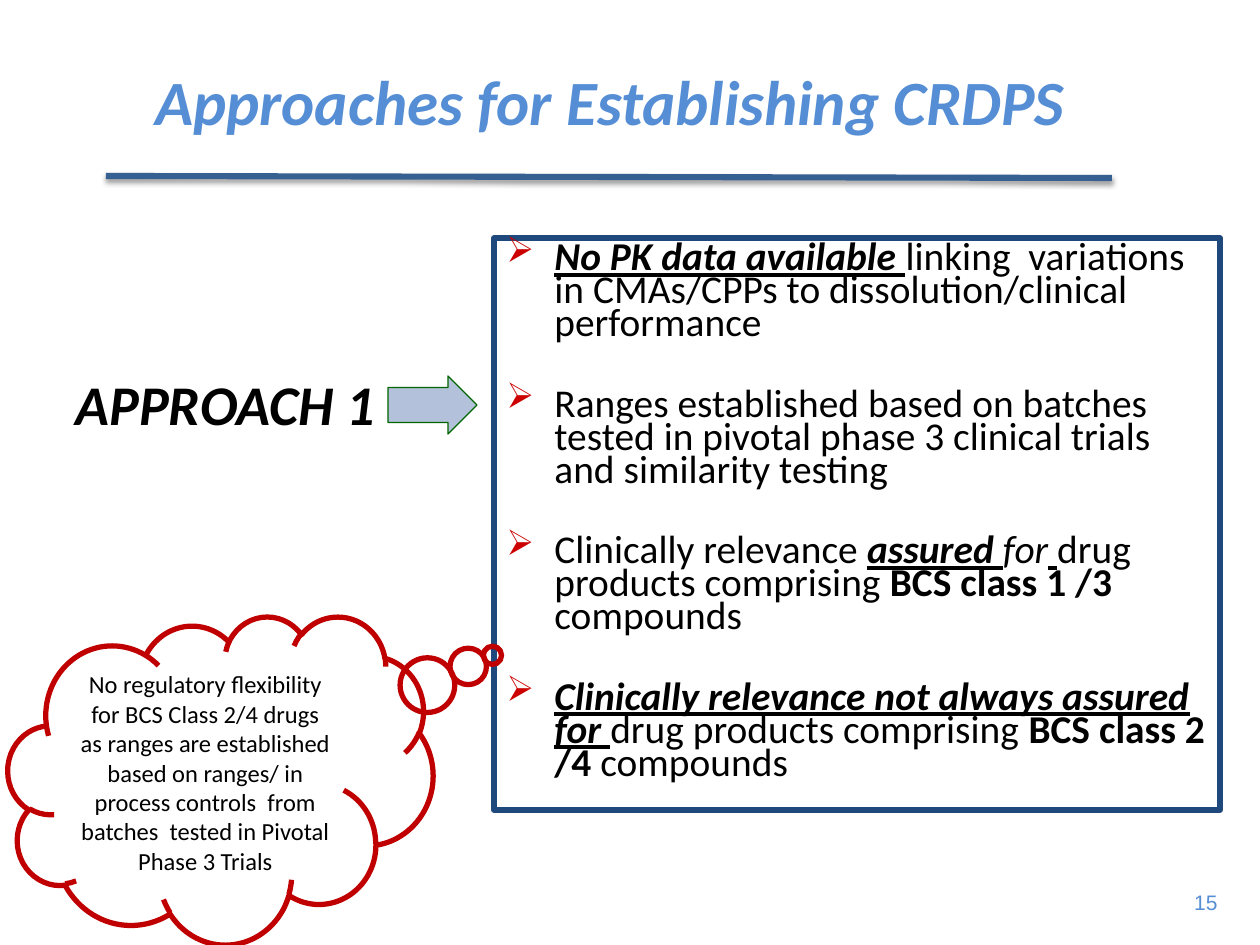
import pptx
import pptx.dml.color
import pptx.enum.shapes
import pptx.enum.text
import pptx.oxml
import pptx.oxml.ns
import pptx.util

RGBColor = pptx.dml.color.RGBColor
MSO_SHAPE = pptx.enum.shapes.MSO_SHAPE
PP_ALIGN = pptx.enum.text.PP_ALIGN
MSO_ANCHOR = pptx.enum.text.MSO_ANCHOR

EMU_PER_PX = 914400 / 126
BLACK = RGBColor(0x00, 0x00, 0x00)
LIGHT_BLUE = RGBColor(0x55, 0x8E, 0xD5)
RULE_BLUE = RGBColor(0x37, 0x60, 0x92)
FRAME_BLUE = RGBColor(0x1F, 0x49, 0x7D)
CLOUD_RED = RGBColor(0xC0, 0x00, 0x00)
BULLET_RED = RGBColor(0xCC, 0x00, 0x00)
ARROW_FILL = RGBColor(0xB3, 0xC1, 0xDB)
ARROW_GREEN = RGBColor(0x00, 0x66, 0x00)

FINDINGS = [
    [("No PK data available ", "biu"),
     ("linking  variations in CMAs/CPPs to dissolution/clinical performance", "")],
    [("Ranges established based on batches tested in pivotal phase 3 clinical trials "
      "and similarity testing", "")],
    [("Clinically relevance ", ""), ("assured ", "biu"), ("for", "i"), (" ", "biu"),
     ("drug products comprising ", ""), ("BCS class 1 /3 ", "b"), ("compounds", "")],
    [("Clinically relevance not always assured for ", "biu"),
     ("drug products comprising ", ""), ("BCS class 2 /4 ", "b"), ("compounds", "")],
]
CLOUD_TEXT = ("No regulatory flexibility for BCS Class 2/4 drugs as ranges are established "
              "based on ranges/ in process controls  from batches  tested in Pivotal "
              "Phase 3 Trials")


def px(*lengths):
    return [pptx.util.Emu(round(length * EMU_PER_PX)) for length in lengths]


def parse(xml):
    namespace = pptx.oxml.ns.nsdecls("a")
    return pptx.oxml.parse_xml(xml.replace(" NS", " " + namespace, 1))


def style_run(run, size, color=BLACK, marks="", name="Calibri"):
    font = run.font
    font.name = name
    font.size = pptx.util.Pt(size)
    font.color.rgb = color
    font.bold = "b" in marks
    font.italic = "i" in marks
    font.underline = "u" in marks


def write_line(shape, text, size, color=BLACK, marks="", align=PP_ALIGN.LEFT,
               anchor=MSO_ANCHOR.TOP, name="Calibri", wrap=True):
    text_frame = shape.text_frame
    text_frame.word_wrap = wrap
    text_frame.vertical_anchor = anchor
    text_frame.text = text
    paragraph = text_frame.paragraphs[0]
    paragraph.alignment = align
    style_run(paragraph.runs[0], size, color, marks, name)


def add_title(slide, text):
    title = slide.shapes.title
    title.left, title.top, title.width, title.height = px(43, 21, 1134, 158)
    write_line(title, text, 36, LIGHT_BLUE, "bi", PP_ALIGN.CENTER, MSO_ANCHOR.MIDDLE)


def add_label(slide, box, text, size, **style):
    write_line(slide.shapes.add_textbox(*px(*box)), text, size, **style)


def add_outlined_shape(slide, kind, box, line_color, line_width, fill=None, adjustments=()):
    shape = slide.shapes.add_shape(kind, *px(*box))
    shape.shadow.inherit = False
    if fill is None:
        shape.fill.background()
    else:
        shape.fill.solid()
        shape.fill.fore_color.rgb = fill
    shape.line.color.rgb = line_color
    shape.line.width = pptx.util.Pt(line_width)
    for index, value in enumerate(adjustments):
        shape.adjustments[index] = value
    return shape


def add_bullet(paragraph):
    properties = paragraph._p.get_or_add_pPr()
    indent = px(48)[0]
    properties.set("marL", str(indent))
    properties.set("indent", str(-indent))
    for xml in (f'<a:buClr NS><a:srgbClr val="{BULLET_RED}"/></a:buClr>',
                '<a:buSzPct NS val="90000"/>',
                '<a:buChar NS char="➢"/>'):
        properties.append(parse(xml))


def add_findings(slide, box, findings):
    frame = add_outlined_shape(slide, MSO_SHAPE.RECTANGLE, box, FRAME_BLUE, 3)
    text_frame = frame.text_frame
    text_frame.word_wrap = True
    text_frame.vertical_anchor = MSO_ANCHOR.TOP
    for index, pieces in enumerate(findings):
        paragraph = text_frame.add_paragraph() if index else text_frame.paragraphs[0]
        add_bullet(paragraph)
        paragraph.alignment = PP_ALIGN.LEFT
        paragraph.line_spacing = 0.7
        if index:
            paragraph.space_before = pptx.util.Pt(27)
        for text, marks in pieces:
            run = paragraph.add_run()
            run.text = text
            style_run(run, 22.5, marks=marks)


def add_rule(slide, ends):
    rule = slide.shapes.add_connector(pptx.enum.shapes.MSO_CONNECTOR.STRAIGHT, *px(*ends))
    rule.line.color.rgb = RULE_BLUE
    rule.line.width = pptx.util.Pt(3.5)
    blur, distance = pptx.util.Pt(3.1), pptx.util.Pt(1.6)
    rule._element.spPr.append(parse(
        f'<a:effectLst NS><a:outerShdw blurRad="{blur}" dist="{distance}" dir="5400000" '
        'rotWithShape="0"><a:srgbClr val="000000"><a:alpha val="38000"/></a:srgbClr>'
        '</a:outerShdw></a:effectLst>'))


def main():
    presentation = pptx.Presentation()
    presentation.slide_width, presentation.slide_height = px(1260, 945)
    slide = presentation.slides.add_slide(presentation.slide_layouts[5])

    add_title(slide, "Approaches for Establishing CRDPS")
    add_label(slide, (1178, 883, 52, 38), "15", 12, color=LIGHT_BLUE,
              align=PP_ALIGN.RIGHT, name="Arial", wrap=False)
    add_label(slide, (63, 363, 369, 112), "APPROACH 1", 32, marks="bi")
    add_findings(slide, (494, 238, 726, 572), FINDINGS)
    cloud = add_outlined_shape(slide, MSO_SHAPE.CLOUD_CALLOUT, (8, 616, 425, 328),
                               CLOUD_RED, 3, adjustments=(0.64, -0.38))
    write_line(cloud, CLOUD_TEXT, 14, align=PP_ALIGN.CENTER, anchor=MSO_ANCHOR.MIDDLE)
    add_outlined_shape(slide, MSO_SHAPE.RIGHT_ARROW, (388, 376, 89, 58),
                       ARROW_GREEN, 0.75, ARROW_FILL, (0.6, 0.5))
    add_rule(slide, (106, 176, 1112, 178))

    presentation.save("out.pptx")


if __name__ == "__main__":
    main()
